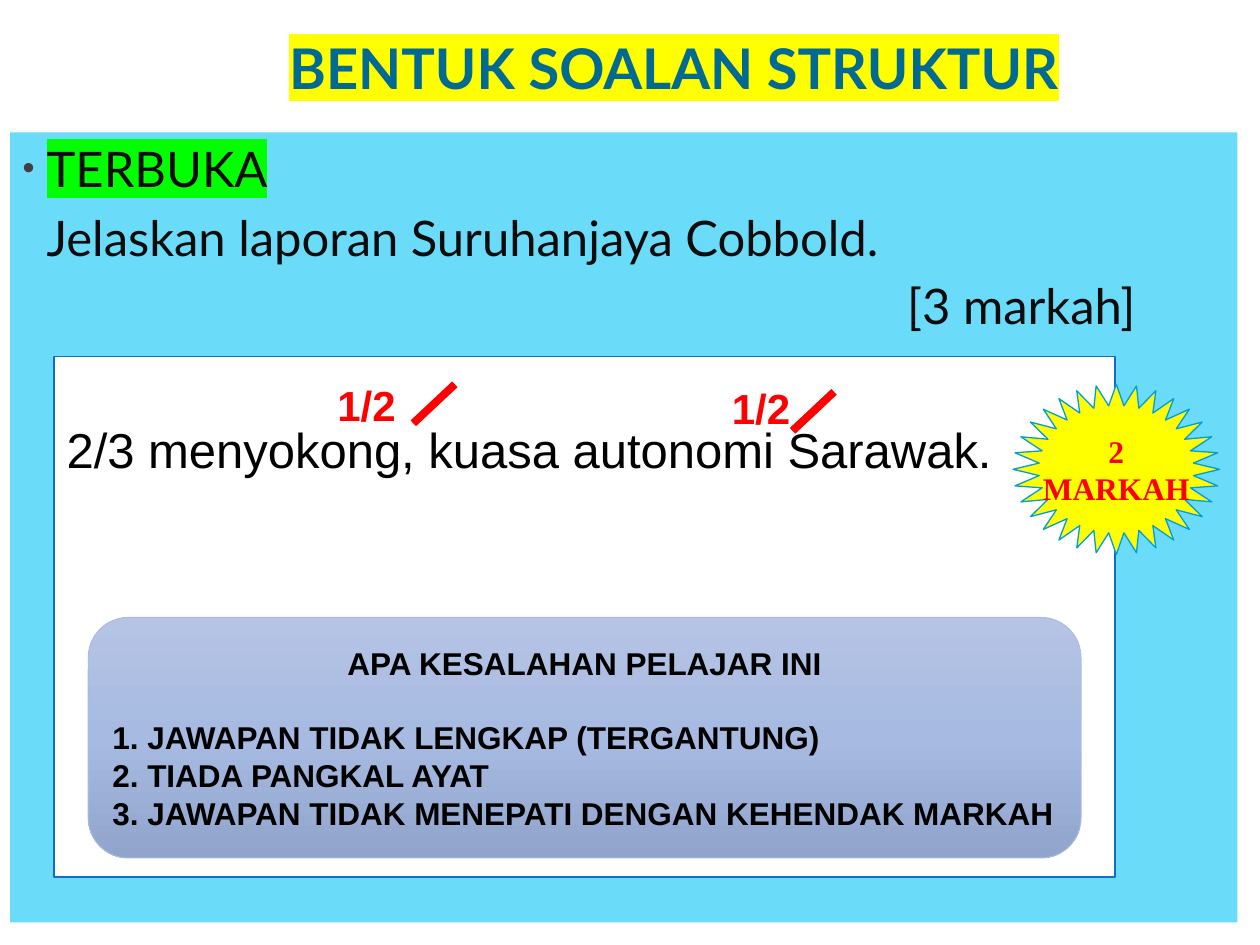
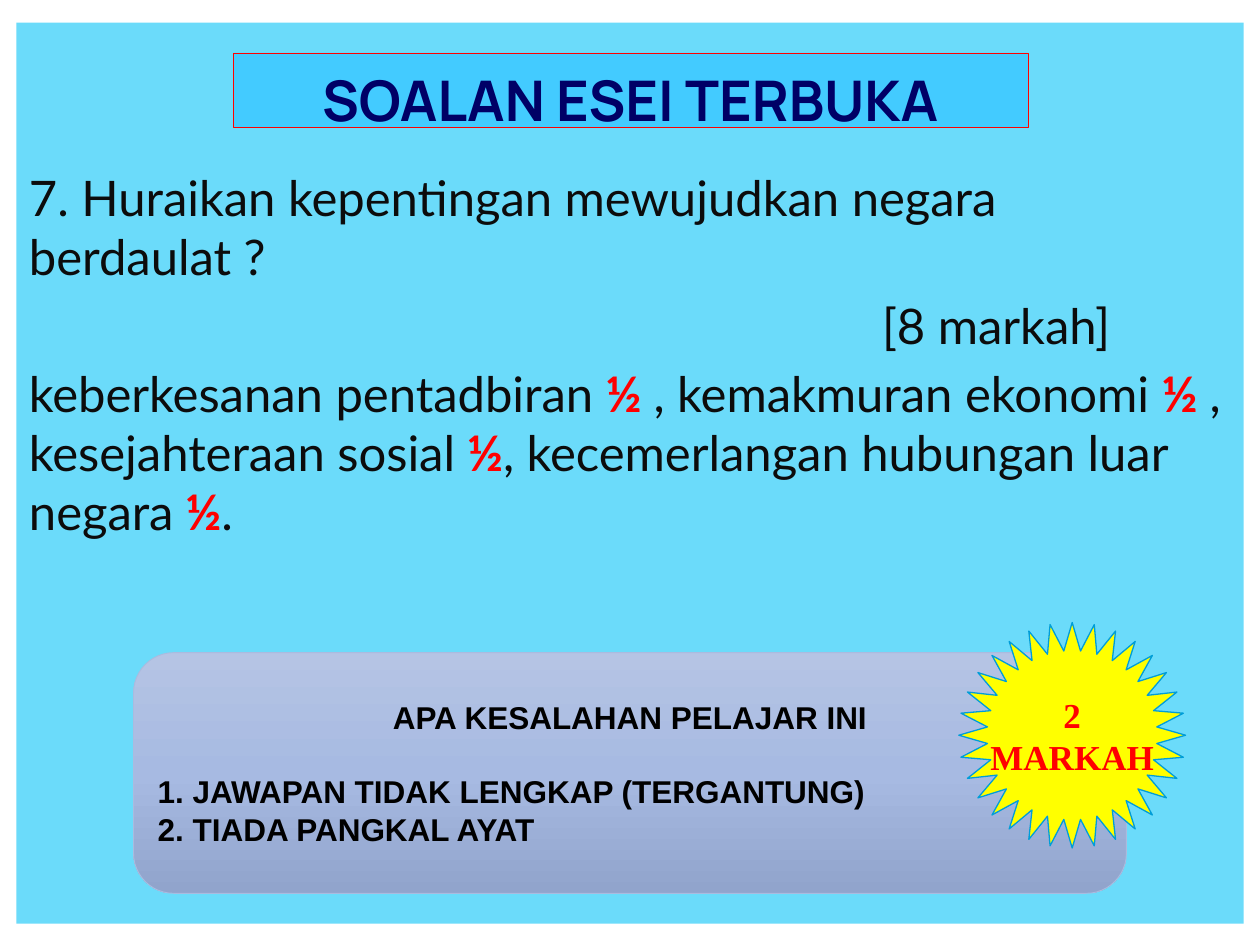
from copy import deepcopy
from dataclasses import dataclass

from lxml.etree import SubElement
from pptx import Presentation
from pptx.dml.color import RGBColor
from pptx.enum.shapes import MSO_CONNECTOR, MSO_SHAPE
from pptx.enum.text import MSO_ANCHOR, MSO_AUTO_SIZE, PP_ALIGN
from pptx.oxml.ns import qn
from pptx.util import Inches, Pt


@dataclass(frozen=True)
class Theme:
    sky: str = "6BDBFA"
    title_band: str = "43CBFF"
    title_teal: str = "006A93"
    title_navy: str = "000066"
    ink: str = "0C0C0C"
    black: str = "000000"
    white: str = "FFFFFF"
    red: str = "FF0000"
    yellow: str = "FFFF00"
    green: str = "00FF00"
    bullet: str = "3F3F3F"
    answer_line: str = "0F6FC6"
    star_line: str = "009DD9"
    panel_line: str = "AABBDF"
    panel_stops: tuple = ((0, "B5C4E4"), (0.5, "A7BAE2"), (1, "91A4CC"))
    text_font: str = "Lato"
    band_font: str = "Manrope"
    panel_font: str = "Arial"
    star_font: str = "Times New Roman"
    title_size: int = 32
    body_size: int = 28
    mark_size: int = 24
    panel_size: int = 18


theme = Theme()
deck = Presentation()
deck.slide_width, deck.slide_height = Inches(10), Inches(7.5)

# Grid of 100 columns by 75 rows
COLUMN = deck.slide_width // 100
ROW = deck.slide_height // 75


def grid(left, top, width, height):
    return [round(n * unit) for n, unit in
            zip((left, top, width, height), (COLUMN, ROW, COLUMN, ROW))]


def write(para, text, size, color, font, bold=False, highlight=None):
    span = para.add_run()
    span.text = text
    span.font.size = Pt(size)
    span.font.bold = bold
    span.font.color.rgb = RGBColor.from_string(color)
    if highlight:
        mark = SubElement(span.font._element, qn("a:highlight"))
        SubElement(mark, qn("a:srgbClr")).set("val", highlight)
    span.font.name = font


# Slide content: body paragraphs are (left indent in inches, bullet, runs)
ink, half = (theme.ink, False, None), (theme.red, True, None)
pages = [
    dict(
        title="BENTUK SOALAN STRUKTUR", title_at=(8.5, 1.8, 90, 7),
        title_style=(theme.title_teal, theme.text_font, True, theme.yellow),
        body_at=(0.8, 10.5, 97.4, 62.7), body_top=0.05,
        body=[
            (0.19, True, [("TERBUKA", theme.ink, False, theme.green)]),
            (0.19, False, [("Jelaskan laporan Suruhanjaya Cobbold.", *ink)]),
            (7.02, False, [("[3 markah]", *ink)]),
        ],
        panel_at=(7, 49, 78.8, 19.1),
        mistakes=["JAWAPAN TIDAK LENGKAP (TERGANTUNG)", "TIADA PANGKAL AYAT",
                  "JAWAPAN TIDAK MENEPATI DENGAN KEHENDAK MARKAH"],
        star_at=(80.4, 30.5, 16.4, 13.5), star_size=18,
    ),
    dict(
        title="SOALAN ESEI TERBUKA", title_at=(18.5, 4.2, 63.1, 5.9),
        title_style=(theme.title_navy, theme.band_font, True, None),
        body_at=(1.3, 1.8, 97.4, 71.5), body_top=1.15,
        body=[
            (0, False, [("7. Huraikan kepentingan mewujudkan negara", *ink),
                        None, ("berdaulat ?", *ink)]),
            (6.77, False, [("[8 markah]", *ink)]),
            (0, False, [
                ("keberkesanan pentadbiran ", *ink), ("½ ", *half),
                (", kemakmuran ekonomi ", *ink), ("½ ", *half),
                (", kesejahteraan sosial", *ink), (" ½", *half),
                (", kecemerlangan hubungan luar negara", *ink), (" ½", *half),
                (".", *ink)]),
        ],
        panel_at=(10.6, 51.8, 78.8, 19.1),
        mistakes=["JAWAPAN TIDAK LENGKAP (TERGANTUNG)", "TIADA PANGKAL AYAT"],
        star_at=(76.1, 49.4, 18, 17.9), star_size=20,
    ),
]

# Titles and bodies
for page in pages:
    slide = page["slide"] = deck.slides.add_slide(deck.slide_layouts[1])
    title, body = slide.shapes.title, slide.placeholders[1]
    body.left, body.top, body.width, body.height = grid(*page["body_at"])
    body.fill.solid()
    body.fill.fore_color.rgb = RGBColor.from_string(theme.sky)
    frame = body.text_frame
    frame.word_wrap = True
    frame.auto_size = MSO_AUTO_SIZE.NONE
    frame.margin_top = Inches(page["body_top"])
    for number, (indent, bullet, runs) in enumerate(page["body"]):
        para = frame.add_paragraph() if number else frame.paragraphs[0]
        properties = para._p.get_or_add_pPr()
        properties.set("marL", str(Inches(indent)))
        properties.set("indent", str(-Inches(indent) if bullet else 0))
        if bullet:
            color = SubElement(properties, qn("a:buClr"))
            SubElement(color, qn("a:srgbClr")).set("val", theme.bullet)
            SubElement(properties, qn("a:buSzPct")).set("val", "70000")
            SubElement(properties, qn("a:buChar")).set("char", "•")
        else:
            SubElement(properties, qn("a:buNone"))
        para.space_before = Pt(theme.body_size * 0.2 if number else 0)
        for run in runs:
            if run is None:
                para.add_line_break()
                continue
            text, color, bold, highlight = run
            write(para, text, theme.body_size, color, theme.text_font, bold, highlight)

    # The title lies in front of the body
    body.element.addnext(title.element)
    title.left, title.top, title.width, title.height = grid(*page["title_at"])
    frame = title.text_frame
    frame.word_wrap = True
    frame.auto_size = MSO_AUTO_SIZE.NONE
    frame.vertical_anchor = MSO_ANCHOR.MIDDLE
    para = frame.paragraphs[0]
    para.alignment = PP_ALIGN.CENTER
    write(para, page["title"], theme.title_size, *page["title_style"])

# Framed title band on the essay slide
band = pages[1]["slide"].shapes.title
band.fill.solid()
band.fill.fore_color.rgb = RGBColor.from_string(theme.title_band)
band.line.color.rgb = RGBColor.from_string(theme.red)
band.line.width = Pt(0.25)
band.text_frame.vertical_anchor = MSO_ANCHOR.TOP
band.text_frame.margin_top = band.text_frame.margin_bottom = Inches(0.1)

# Student's answer on the structured question slide
shapes = pages[0]["slide"].shapes
answer = shapes.add_shape(MSO_SHAPE.RECTANGLE, *grid(4.3, 28.3, 84.2, 41.3))
answer.shadow.inherit = False
answer.fill.solid()
answer.fill.fore_color.rgb = RGBColor.from_string(theme.white)
answer.line.color.rgb = RGBColor.from_string(theme.answer_line)
answer.line.width = Pt(1)
frame = answer.text_frame
frame.word_wrap = True
frame.vertical_anchor = MSO_ANCHOR.TOP
frame.margin_top = Inches(0.5)
para = frame.paragraphs[0]
para.alignment = PP_ALIGN.LEFT
write(para, "2/3 menyokong, kuasa autonomi Sarawak.", theme.body_size,
      theme.black, theme.panel_font)

# Half marks with their ticks
for label_left, label_top, tick_left, tick_top in (
        (25.8, 29.6, 32.8, 30.5), (57.1, 29.9, 62.9, 31.1)):
    left, top, width, height = grid(tick_left, tick_top, 3.3, 3.1)
    tick = shapes.add_connector(MSO_CONNECTOR.STRAIGHT,
                                left, top + height, left + width, top)
    tick.line.color.rgb = RGBColor.from_string(theme.red)
    tick.line.width = Pt(4.5)
    SubElement(tick.element.spPr, qn("a:effectLst"))
    label = shapes.add_textbox(*grid(label_left, label_top, 6.7, 5))
    label.text_frame.word_wrap = True
    write(label.text_frame.paragraphs[0], "1/2", theme.mark_size,
          theme.red, theme.panel_font, True)

# Mistakes panel and score star on both slides
for page in pages:
    shapes = page["slide"].shapes
    panel = shapes.add_shape(MSO_SHAPE.ROUNDED_RECTANGLE, *grid(*page["panel_at"]))
    panel.shadow.inherit = False
    panel.fill.gradient()
    panel.fill.gradient_angle = 270
    stops = panel.element.spPr.find(".//" + qn("a:gsLst"))
    stops.insert(1, deepcopy(stops[0]))
    for stop, (position, color) in zip(panel.fill.gradient_stops, theme.panel_stops):
        stop.position = position
        stop.color.rgb = RGBColor.from_string(color)
    panel.line.color.rgb = RGBColor.from_string(theme.panel_line)
    panel.line.width = Pt(0.5)
    frame = panel.text_frame
    frame.word_wrap = False
    frame.vertical_anchor = MSO_ANCHOR.MIDDLE
    para = frame.paragraphs[0]
    para.alignment = PP_ALIGN.CENTER
    para.space_after = Pt(theme.panel_size * 1.15)
    write(para, "APA KESALAHAN PELAJAR INI", theme.panel_size,
          theme.black, theme.panel_font, True)
    for number, mistake in enumerate(page["mistakes"], 1):
        para = frame.add_paragraph()
        para.alignment = PP_ALIGN.JUSTIFY
        write(para, f"{number}. {mistake}", theme.panel_size,
              theme.black, theme.panel_font, True)

    star = shapes.add_shape(MSO_SHAPE.STAR_32_POINT, *grid(*page["star_at"]))
    star.shadow.inherit = False
    star.adjustments[0] = 0.375
    star.fill.solid()
    star.fill.fore_color.rgb = RGBColor.from_string(theme.yellow)
    star.line.color.rgb = RGBColor.from_string(theme.star_line)
    star.line.width = Pt(0.75)
    frame = star.text_frame
    frame.word_wrap = False
    frame.vertical_anchor = MSO_ANCHOR.MIDDLE
    for number, text in enumerate(("2", "MARKAH")):
        para = frame.add_paragraph() if number else frame.paragraphs[0]
        para.alignment = PP_ALIGN.CENTER
        write(para, text, page["star_size"], theme.red, theme.star_font, True)

deck.save("out.pptx")
